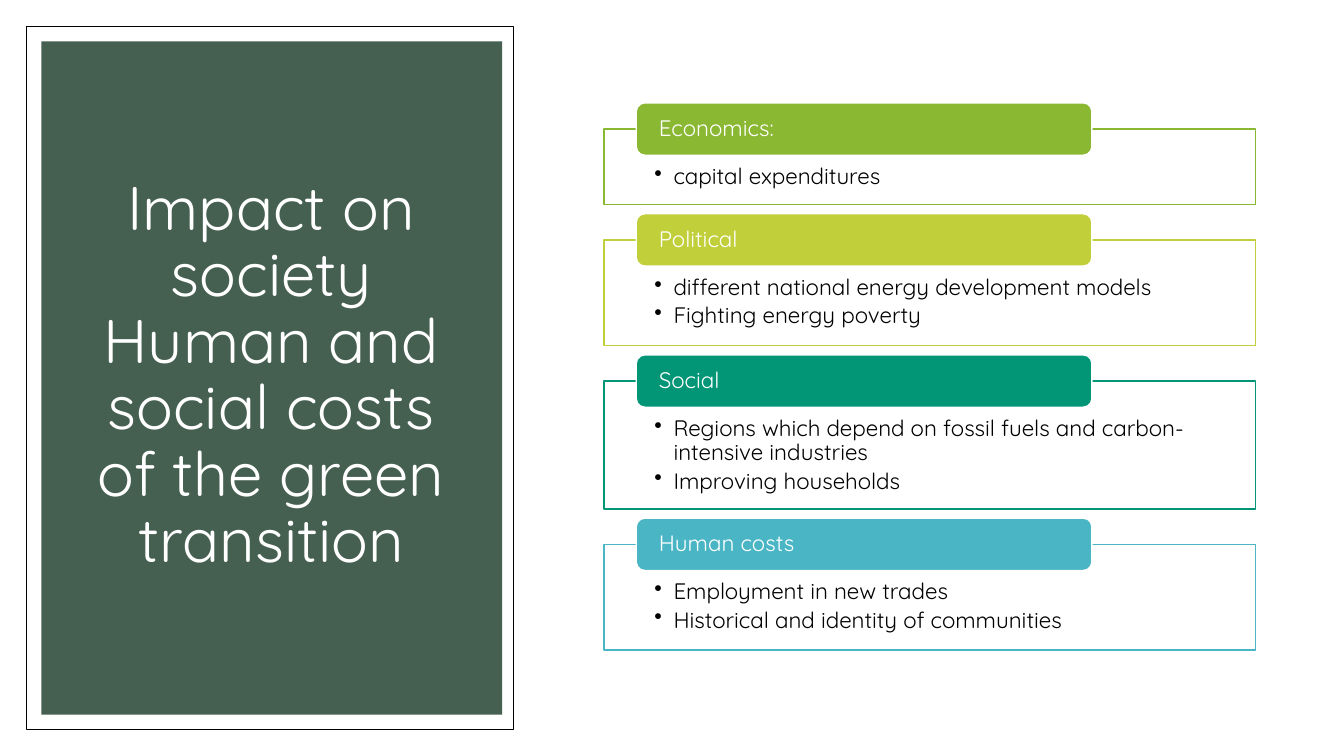
from pptx import Presentation
from pptx.dml.color import RGBColor
from pptx.enum.shapes import MSO_SHAPE
from pptx.enum.text import MSO_ANCHOR, MSO_AUTO_SIZE, PP_ALIGN
from pptx.oxml.ns import qn
from pptx.util import Pt
from lxml import etree

RECT, ROUND = MSO_SHAPE.RECTANGLE, MSO_SHAPE.ROUNDED_RECTANGLE
TOP, MIDDLE = MSO_ANCHOR.TOP, MSO_ANCHOR.MIDDLE
LEFT, CENTER = PP_ALIGN.LEFT, PP_ALIGN.CENTER
WHITE, BLACK = RGBColor(0xFF, 0xFF, 0xFF), RGBColor(0, 0, 0)
PINE = RGBColor(0x45, 0x5F, 0x51)
GREEN = RGBColor(0x8A, 0xB8, 0x33)
LIME = RGBColor(0xC0, 0xCF, 0x3A)
TEAL = RGBColor(0x02, 0x96, 0x76)
AQUA = RGBColor(0x4A, 0xB5, 0xC4)
FONT = "Quicksand"
PX = 9144  # 100 px to the inch

TITLE = "Impact on society\vHuman and social costs of the green transition"
CARDS = [
    ("Economics:", GREEN, 75, ["capital expenditures"]),
    ("Political", LIME, 105, ["different national energy development models",
                              "Fighting energy poverty"]),
    ("Social", TEAL, 127, ["Regions which depend on fossil fuels and carbon-intensive industries",
                           "Improving households"]),
    ("Human costs", AQUA, 105, ["Employment in new trades",
                                "Historical and identity of communities"]),
]


def px(*sizes):
    return [size * PX for size in sizes]


def add_box(slide, kind, box, fill, line=None, width=1):
    shape = slide.shapes.add_shape(kind, *px(*box))
    shape.shadow.inherit = False
    shape.fill.solid()
    shape.fill.fore_color.rgb = fill
    if line is None:
        shape.line.fill.background()
    else:
        shape.line.color.rgb = line
        shape.line.width = Pt(width)
    return shape


def set_text(shape, lines, size, color, align, anchor, insets):
    """Fill the shape with one paragraph per line; insets run left, top, right, bottom."""
    frame = shape.text_frame
    frame.word_wrap = True
    frame.auto_size = MSO_AUTO_SIZE.NONE
    frame.vertical_anchor = anchor
    (frame.margin_left, frame.margin_top,
     frame.margin_right, frame.margin_bottom) = px(*insets)
    for i, line in enumerate(lines):
        para = frame.add_paragraph() if i else frame.paragraphs[0]
        para.text = line
        para.alignment = align
        para.line_spacing = 0.9
        para.font.name = FONT
        para.font.size = Pt(size)
        para.font.color.rgb = color
    return frame.paragraphs


def add_bullet(para):
    props = para._p.get_or_add_pPr()
    props.set("marL", str(19 * PX))
    props.set("indent", str(-19 * PX))
    bullet = etree.Element(qn("a:buChar"), char="•")
    props.find(qn("a:defRPr")).addprevious(bullet)


def draw_panel(slide, box):
    x, y, w, h = box
    add_box(slide, RECT, box, WHITE, BLACK, 0.5)
    add_box(slide, RECT, (x + 15, y + 15, w - 26, h - 30), PINE)
    title = slide.shapes.title
    title.left, title.top, title.width, title.height = px(x + 37, y + 48, w - 71, h - 99)
    set_text(title, [TITLE], 44, WHITE, CENTER, MIDDLE, (10, 5, 10, 5))
    slide.shapes._spTree.append(title._element)  # in front of the panel


def draw_card(slide, box, head, color, items):
    x, y, w, h = box
    body = add_box(slide, RECT, box, WHITE, color)
    for para in set_text(body, items, 16, BLACK, LEFT, TOP, (50, 36, 50, 12)):
        para.space_after = Pt(3)
        add_bullet(para)
    tab = add_box(slide, ROUND, (x + 32, y - 26, w * 7 // 10, 52), color, WHITE)
    set_text(tab, [head], 16, WHITE, LEFT, MIDDLE, (20, 0, 20, 0))


def draw_cards(slide, x, y, w, gap):
    for head, color, h, items in CARDS:
        draw_card(slide, (x, y, w, h), head, color, items)
        y += h + gap


def main():
    deck = Presentation()
    deck.slide_width, deck.slide_height = px(1333, 750)
    slide = deck.slides.add_slide(deck.slide_layouts[5])
    draw_panel(slide, (26, 26, 483, 698))
    draw_cards(slide, 599, 128, 646, 35)
    deck.save("out.pptx")


if __name__ == "__main__":
    main()
